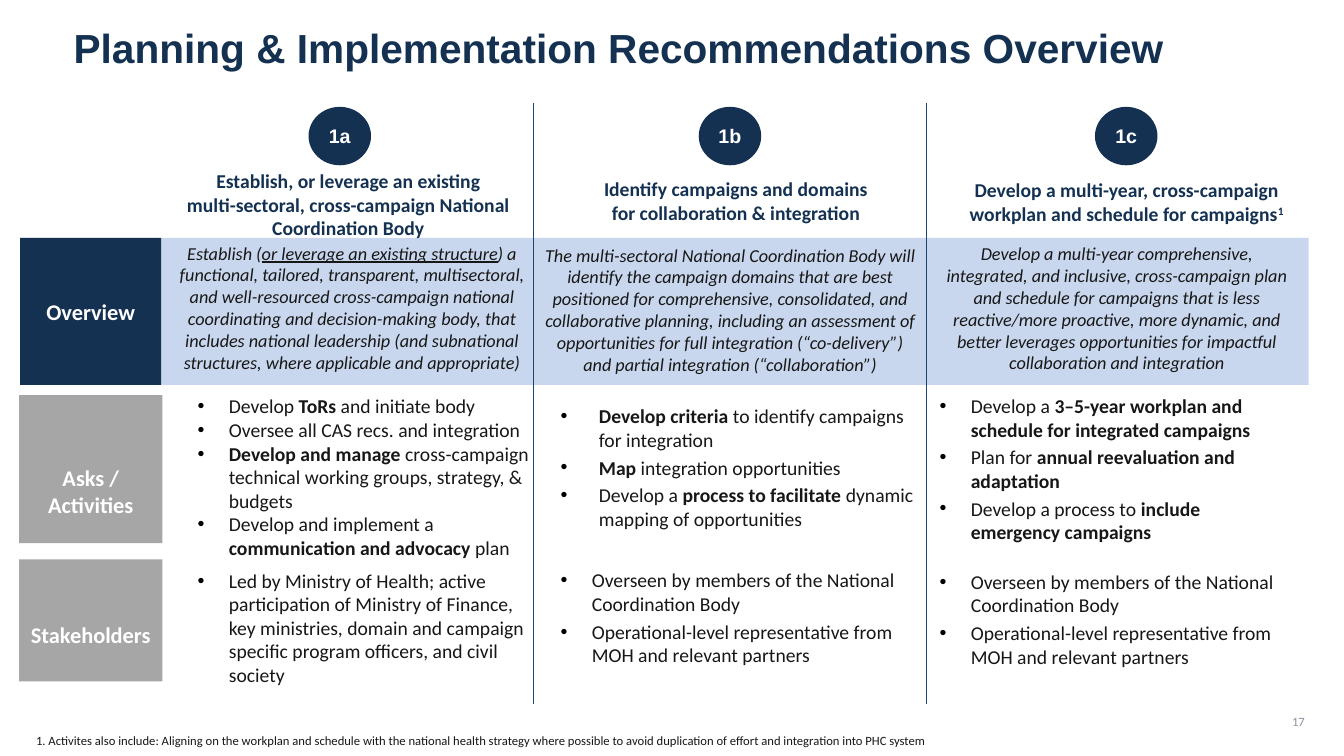
from dataclasses import dataclass

from lxml import etree
from pptx import Presentation
from pptx.dml.color import RGBColor
from pptx.enum.shapes import MSO_CONNECTOR, MSO_SHAPE
from pptx.enum.text import MSO_ANCHOR, MSO_AUTO_SIZE, PP_ALIGN
from pptx.oxml.ns import qn
from pptx.util import Inches, Pt

RECT, OVAL = MSO_SHAPE.RECTANGLE, MSO_SHAPE.OVAL
STRAIGHT = MSO_CONNECTOR.STRAIGHT
TOP, MIDDLE = MSO_ANCHOR.TOP, MSO_ANCHOR.MIDDLE
LEFT, CENTER, RIGHT = PP_ALIGN.LEFT, PP_ALIGN.CENTER, PP_ALIGN.RIGHT
NO_AUTOFIT = MSO_AUTO_SIZE.NONE
COMPARISON_LAYOUT = 4


@dataclass(frozen=True)
class Theme:
    navy: str = "143151"
    rule: str = "1C4572"
    band: str = "C8D7ED"
    gray: str = "A6A6A6"
    ink: str = "181717"
    white: str = "FFFFFF"
    black: str = "000000"
    page: str = "8A91A0"
    heading_font: str = "Arial"
    body_font: str = "Calibri"
    title_size: int = 29
    label_size: int = 16
    body_size: int = 14
    overview_size: int = 13
    note_size: int = 9


THEME = Theme()


def write(tf, paragraphs, size=THEME.body_size, color=THEME.ink, font=THEME.body_font,
          bold=False, italic=False, align=LEFT, anchor=TOP, emphasis="bold",
          after=0, line_spacing=1.0, bullet_indent=None):
    """Fill a text frame; pieces between | marks get the emphasis."""
    tf.word_wrap = True
    tf.auto_size = NO_AUTOFIT
    tf.vertical_anchor = anchor
    for i, text in enumerate(paragraphs):
        p = tf.add_paragraph() if i else tf.paragraphs[0]
        p.alignment = align
        p.line_spacing = line_spacing
        p.space_before, p.space_after = Pt(0), Pt(after)
        if bullet_indent:
            add_bullet(p, bullet_indent)
        for j, piece in enumerate(text.split("|")):
            if not piece:
                continue
            r = p.add_run()
            r.text = piece
            f = r.font
            f.name, f.size, f.bold, f.italic = font, Pt(size), bold, italic
            f.color.rgb = RGBColor.from_string(color)
            if j % 2 and emphasis == "superscript":
                r._r.get_or_add_rPr().set("baseline", "30000")
            elif j % 2:
                setattr(f, emphasis, True)


def add_bullet(p, indent):
    pPr = p._p.get_or_add_pPr()
    pPr.set("marL", str(Inches(indent)))
    pPr.set("indent", str(-Inches(indent)))
    clr = etree.SubElement(pPr, qn("a:buClr"))
    etree.SubElement(clr, qn("a:srgbClr"), val=THEME.black)
    etree.SubElement(pPr, qn("a:buFont"), typeface="Arial")
    etree.SubElement(pPr, qn("a:buChar"), char="•")


def place(sp, box):
    sp.left, sp.top, sp.width, sp.height = (Inches(v) for v in box)


class SlideBuilder:
    def __init__(self, slide, theme):
        self.s, self.theme = slide, theme
        self.bodies = [ph for ph in slide.placeholders if ph.placeholder_format.idx]

    def title(self, text, box):
        sp = self.s.shapes.title
        place(sp, box)
        write(sp.text_frame, [text], size=self.theme.title_size, color=self.theme.navy,
              font=self.theme.heading_font, bold=True, line_spacing=0.9)

    def text(self, paragraphs, box, **fmt):
        sp = self.s.shapes.add_textbox(*(Inches(v) for v in box))
        write(sp.text_frame, paragraphs, **fmt)

    def bullets(self, items, box, indent=0.31, after=3):
        """Use the layout's body placeholders first, then text boxes."""
        fmt = dict(anchor=MIDDLE, bullet_indent=indent, after=after)
        if self.bodies:
            sp = self.bodies.pop(0)
            place(sp, box)
            write(sp.text_frame, items, **fmt)
        else:
            self.text(items, box, **fmt)

    def shape(self, kind, box, fill, paragraphs=(), drop=0, **fmt):
        """Draw a borderless shape; drop is extra inset above its text."""
        sp = self.s.shapes.add_shape(kind, *(Inches(v) for v in box))
        sp.shadow.inherit = False
        sp.fill.solid()
        sp.fill.fore_color.rgb = RGBColor.from_string(fill)
        sp.line.fill.background()
        sp.text_frame.margin_top = Inches(0.05 + drop)
        write(sp.text_frame, paragraphs, color=self.theme.white, bold=True,
              align=CENTER, anchor=MIDDLE, **fmt)

    def divider(self, x, top, bottom):
        line = self.s.shapes.add_connector(
            STRAIGHT, Inches(x), Inches(top), Inches(x), Inches(bottom))
        line.line.color.rgb = RGBColor.from_string(self.theme.rule)
        line.line.width = Pt(1)
        etree.SubElement(line._element.spPr, qn("a:effectLst"))


PARTNERS = ["Overseen by members of the National Coordination Body",
            "Operational-level representative from MOH and relevant partners"]

COLUMNS = [
    dict(badge="1a", badge_x=3.06,
         heading=["Establish, or leverage an existing",
                  "multi-sectoral, cross-campaign National Coordination Body"],
         heading_box=(1.49, 1.63, 3.93, 0.81),
         overview="Establish (|or leverage an existing structure|) a functional, tailored, "
                  "transparent, multisectoral, and well-resourced cross-campaign national "
                  "coordinating and decision-making body, that includes national leadership "
                  "(and subnational structures, where applicable and appropriate)",
         overview_box=(1.59, 2.43, 3.8, 1.24),
         asks=["Develop |ToRs| and initiate body",
               "Oversee all CAS recs. and integration",
               "|Develop and manage| cross-campaign technical working groups, strategy, & budgets",
               "Develop and implement a |communication and advocacy |plan"],
         asks_box=(1.86, 4, 3.54, 1.46), asks_format=dict(after=0),
         stakeholders=["Led by Ministry of Health; active participation of Ministry of Finance, "
                       "key ministries, domain and campaign specific program officers, "
                       "and civil society"],
         stakeholders_box=(1.86, 5.62, 3.54, 1.21)),
    dict(badge="1b", badge_x=6.93,
         heading=["Identify campaigns and domains for collaboration & integration"],
         heading_box=(5.77, 1.71, 3.06, 0.57),
         overview="The multi-sectoral National Coordination Body will identify the campaign "
                  "domains that are best positioned for comprehensive, consolidated, and "
                  "collaborative planning, including an assessment of opportunities for full "
                  "integration (“co-delivery”) and partial integration (“collaboration”)",
         overview_box=(5.3, 2.45, 3.88, 1.24),
         asks=["|Develop criteria |to identify campaigns for integration",
               "|Map| integration opportunities",
               "Develop a |process to facilitate |dynamic mapping of opportunities"],
         asks_box=(5.46, 3.92, 3.7, 1.43), asks_format=dict(indent=0.38),
         stakeholders=PARTNERS, stakeholders_box=(5.46, 5.52, 3.7, 1.21)),
    dict(badge="1c", badge_x=10.86,
         heading=["Develop a multi-year, cross-campaign workplan and schedule for campaigns|1"],
         heading_box=(9.26, 1.72, 3.83, 0.57),
         overview="Develop a multi-year comprehensive, integrated, and inclusive, cross-campaign "
                  "plan and schedule for campaigns that is less reactive/more proactive, more "
                  "dynamic, and better leverages opportunities for impactful collaboration "
                  "and integration",
         overview_box=(9.22, 2.43, 3.71, 1.25),
         asks=["Develop a |3–5-year workplan and schedule for integrated campaigns",
               "Plan for |annual reevaluation and adaptation",
               "Develop a process to |include emergency campaigns"],
         asks_box=(9.22, 3.92, 3.71, 1.46), asks_format={},
         stakeholders=PARTNERS, stakeholders_box=(9.22, 5.55, 3.71, 1.18)),
]


def main():
    prs = Presentation()
    prs.slide_width, prs.slide_height = Inches(13.33), Inches(7.5)
    t = THEME
    b = SlideBuilder(prs.slides.add_slide(prs.slide_layouts[COMPARISON_LAYOUT]), t)

    b.title("Planning & Implementation Recommendations Overview", (0.63, 0.23, 12.6, 0.59))
    b.shape(RECT, (0.2, 2.36, 12.78, 1.46), t.band)
    for lines, box, fill, drop in [
            (["Overview"], (0.2, 2.36, 1.4, 1.46), t.navy, 0),
            (["Asks /", "Activities"], (0.19, 3.92, 1.42, 1.47), t.gray, 0.44),
            (["Stakeholders"], (0.19, 5.55, 1.42, 1.21), t.gray, 0.27)]:
        b.shape(RECT, box, fill, lines, drop, size=t.label_size)

    for col in COLUMNS:
        b.shape(OVAL, (col["badge_x"], 1.06, 0.62, 0.58), t.navy, [col["badge"]],
                font=t.heading_font)
        b.text(col["heading"], col["heading_box"], color=t.navy, bold=True,
               align=CENTER, emphasis="superscript")
        b.text([col["overview"]], col["overview_box"], size=t.overview_size, italic=True,
               align=CENTER, anchor=MIDDLE, emphasis="underline")
        b.bullets(col["asks"], col["asks_box"], **col["asks_format"])
        b.bullets(col["stakeholders"], col["stakeholders_box"])

    for x in (5.29, 9.19):
        b.divider(x, 1.02, 6.98)
    b.text(["1. Activites also include: Aligning on the workplan and schedule with the national "
            "health strategy where possible to avoid duplication of effort and integration "
            "into PHC system"], (0.26, 7.22, 9.76, 0.25), size=t.note_size)
    b.text(["17"], (12.46, 6.96, 0.58, 0.4), size=t.note_size, color=t.page,
           align=RIGHT, anchor=MIDDLE)
    prs.save("out.pptx")


if __name__ == "__main__":
    main()
